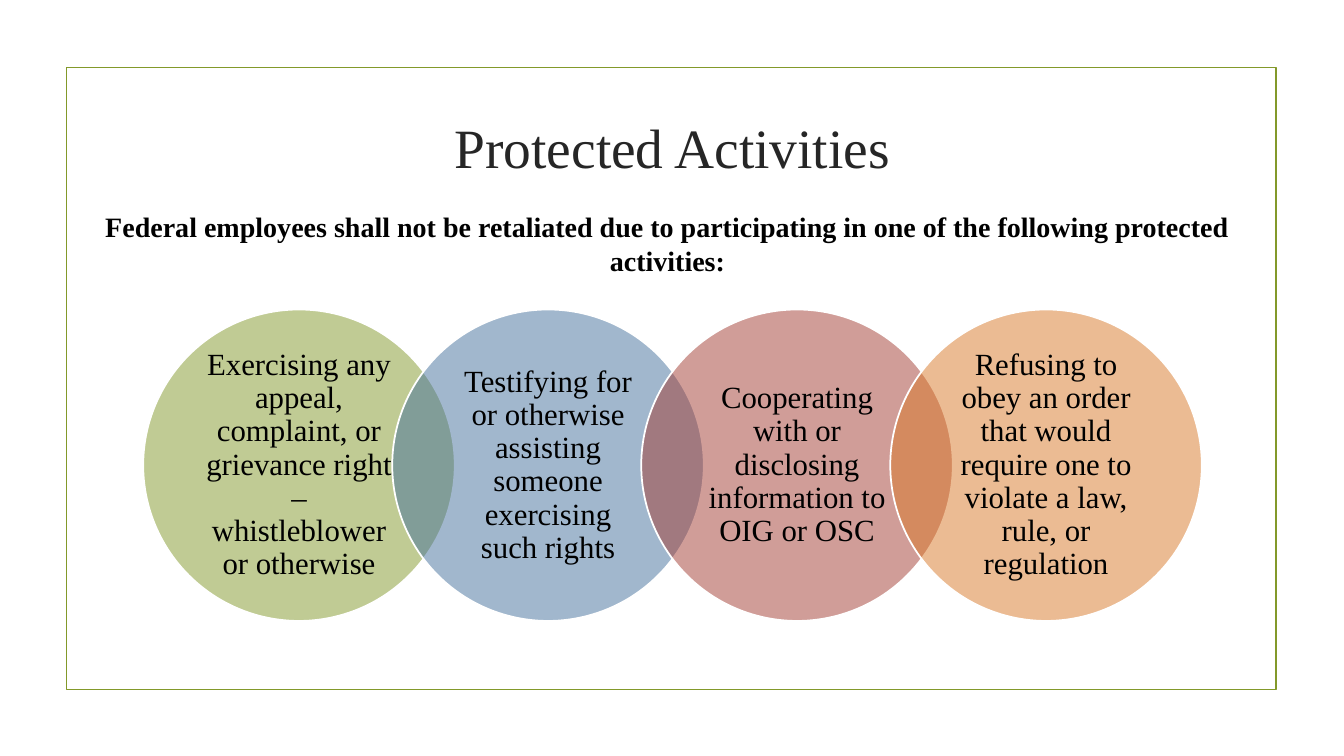
"""Build the Protected Activities slide with its four overlapping circles."""
from dataclasses import dataclass

from lxml.etree import SubElement
from pptx import Presentation
from pptx.dml.color import RGBColor
from pptx.enum.shapes import MSO_SHAPE as Preset
from pptx.enum.text import MSO_ANCHOR as Anchor, MSO_AUTO_SIZE as AutoSize, PP_ALIGN as Align
from pptx.oxml.ns import qn
from pptx.shapes.autoshape import Shape
from pptx.slide import Slide
from pptx.util import Inches, Pt

FONT = "Times New Roman"
COLORS = {
    "frame": "83992A",
    "title": "262626",
    "text": "000000",
    "outline": "FFFFFF",
    "green": "83992A",
    "blue": "44709D",
    "red": "A23C33",
    "orange": "D97828",
}
FIRST_LEFT, CIRCLE_TOP, DIAMETER, STEP = 1.42, 3.07, 3.09, 2.47


@dataclass(frozen=True)
class Activity:
    """A protected activity and the color of its circle."""
    wording: str
    color: str


ACTIVITIES = [
    Activity("Exercising any appeal, complaint, or grievance right –whistleblower or otherwise", "green"),
    Activity("Testifying for or otherwise assisting someone exercising such rights", "blue"),
    Activity("Cooperating with or disclosing information to OIG or OSC", "red"),
    Activity("Refusing to obey an order that would require one to violate a law, rule, or regulation", "orange"),
]


def rgb(name: str) -> RGBColor:
    """Look up a named color."""
    return RGBColor.from_string(COLORS[name])


def write(shape: Shape, text: str, *, size: float, color: str = "text", bold: bool = False,
          anchor: Anchor = Anchor.MIDDLE, spacing: float = 1.0,
          margins: tuple[float, float] = (0.1, 0.05)) -> None:
    """Write one centered paragraph into a shape."""
    frame = shape.text_frame
    frame.text = text
    frame.word_wrap = True
    frame.auto_size = AutoSize.NONE
    frame.vertical_anchor = anchor
    frame.margin_left = frame.margin_right = Inches(margins[0])
    frame.margin_top = frame.margin_bottom = Inches(margins[1])
    paragraph = frame.paragraphs[0]
    paragraph.alignment = Align.CENTER
    paragraph.line_spacing = spacing
    font = paragraph.runs[0].font
    font.name, font.size, font.bold = FONT, Pt(size), bold
    font.color.rgb = rgb(color)


def add_outlined(slide: Slide, preset: Preset, box: tuple[float, ...], line: str) -> Shape:
    """Add an unfilled preset shape with a thin outline."""
    shape = slide.shapes.add_shape(preset, *map(Inches, box))
    shape.shadow.inherit = False
    shape.fill.background()
    shape.line.color.rgb = rgb(line)
    shape.line.width = Pt(1.25)
    return shape


def add_activity(slide: Slide, activity: Activity, left: float) -> None:
    """Draw one half-transparent circle holding its activity."""
    circle = add_outlined(slide, Preset.OVAL, (left, CIRCLE_TOP, DIAMETER, DIAMETER), "outline")
    circle.fill.solid()
    circle.fill.fore_color.rgb = rgb(activity.color)
    color_element = circle.fill._xPr.find(qn("a:solidFill"))[0]
    SubElement(color_element, qn("a:alpha"), val="50000")
    write(circle, activity.wording, size=22, spacing=0.9, margins=(0.17, 0.03))


def main() -> None:
    """Create and save the slide."""
    deck = Presentation()
    deck.slide_width, deck.slide_height = Inches(13.33), Inches(7.5)
    slide = deck.slides.add_slide(deck.slide_layouts[5])

    add_outlined(slide, Preset.RECTANGLE, (0.66, 0.67, 12, 6.17), "frame")

    title = slide.shapes.title
    title.left, title.top, title.width, title.height = map(Inches, (1.42, 1.07, 10.5, 0.77))
    write(title, "Protected Activities", size=39.6, color="title")

    for index, activity in enumerate(ACTIVITIES):
        add_activity(slide, activity, FIRST_LEFT + index * STEP)

    introduction = slide.shapes.add_textbox(*map(Inches, (0.71, 2.03, 11.82, 0.77)))
    write(introduction, "Federal employees shall not be retaliated due to participating in one of "
          "the following protected activities:", size=20, bold=True, anchor=Anchor.TOP)

    deck.save("out.pptx")


if __name__ == "__main__":
    main()
